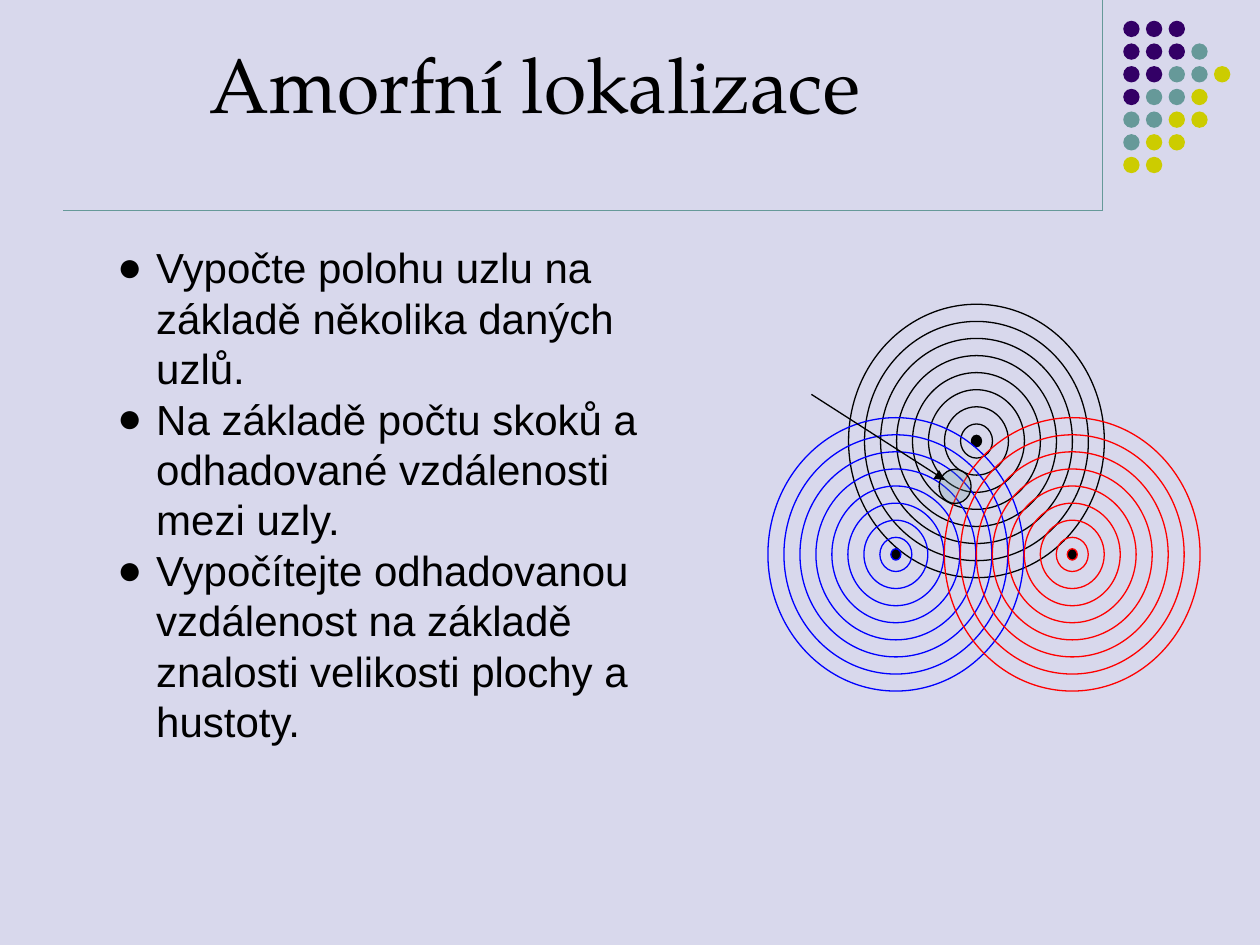
import pptx
import pptx.util
import pptx.dml.color
import pptx.enum.shapes
import pptx.enum.text
import pptx.oxml.ns
from dataclasses import dataclass
from typing import Optional
from lxml import etree

Inches = pptx.util.Inches
Pt = pptx.util.Pt
qn = pptx.oxml.ns.qn


@dataclass(frozen=True)
class Theme:
    background: str = "D8D8EC"
    ink: str = "000000"
    purple: str = "330066"
    teal: str = "669999"
    yellow: str = "CCCC00"
    blue: str = "0000FF"
    red: str = "FF0000"
    title_font: str = "TeX Gyre Pagella"
    body_font: str = "Arial"
    title_size: float = 44
    body_size: float = 24
    body_pitch: float = 28.8
    line_width: float = 0.75


@dataclass(frozen=True)
class Anchor:
    """A known node, surrounded by one ring per hop."""
    x: float
    y: float
    color: str


THEME = Theme()
ANCHORS = [
    Anchor(7.75, 3.5, THEME.ink),
    Anchor(7.11, 4.4, THEME.blue),
    Anchor(8.51, 4.4, THEME.red),
]
HOPS = 8
RING_WIDTH, RING_HEIGHT = 2.03 / HOPS, 2.17 / HOPS

# One letter per dot: purple, teal, yellow
DOT_ROWS = ["PPP", "PPPT", "PPTTY", "PTTY", "TTYY", "TYY", "YY"]
DOT_COLORS = {"P": THEME.purple, "T": THEME.teal, "Y": THEME.yellow}
DOT_LEFT, DOT_TOP, DOT_PITCH, DOT_SIZE = 8.98, 0.23, 0.18, 0.13

BULLETS = [
    "Vypočte polohu uzlu na základě několika daných uzlů.",
    "Na základě počtu skoků a odhadované vzdálenosti mezi uzly.",
    "Vypočítejte odhadovanou vzdálenost na základě znalosti velikosti plochy a hustoty.",
]


def rgb(color: str) -> pptx.dml.color.RGBColor:
    return pptx.dml.color.RGBColor.from_string(color)


def add_ellipse(shapes, x: float, y: float, width: float, height: float, *,
                fill: Optional[str] = None, line: Optional[str] = None,
                alpha: Optional[int] = None):
    """Draw an ellipse around the centre x, y; alpha is the opacity in percent."""
    ellipse = shapes.add_shape(
        pptx.enum.shapes.MSO_SHAPE.OVAL, Inches(x - width / 2),
        Inches(y - height / 2), Inches(width), Inches(height))
    ellipse.shadow.inherit = False
    if fill:
        ellipse.fill.solid()
        ellipse.fill.fore_color.rgb = rgb(fill)
    else:
        ellipse.fill.background()
    if alpha is not None:
        color = ellipse.fill._xPr.find(".//" + qn("a:srgbClr"))
        etree.SubElement(color, qn("a:alpha"), val=str(alpha * 1000))
    if line:
        ellipse.line.color.rgb = rgb(line)
        ellipse.line.width = Pt(THEME.line_width)
    else:
        ellipse.line.fill.background()
    return ellipse


def add_line(shapes, x1: float, y1: float, x2: float, y2: float, color: str,
             *, arrow: bool = False):
    line = shapes.add_connector(
        pptx.enum.shapes.MSO_CONNECTOR.STRAIGHT,
        Inches(x1), Inches(y1), Inches(x2), Inches(y2))
    line.line.color.rgb = rgb(color)
    line.line.width = Pt(THEME.line_width)
    if arrow:
        etree.SubElement(line.line._get_or_add_ln(), qn("a:tailEnd"), type="triangle")
    etree.SubElement(line._element.spPr, qn("a:effectLst"))
    return line


def place(box, left: float, top: float, width: float, height: float, anchor) -> None:
    box.left, box.top = Inches(left), Inches(top)
    box.width, box.height = Inches(width), Inches(height)
    box.text_frame.word_wrap = True
    box.text_frame.auto_size = pptx.enum.text.MSO_AUTO_SIZE.NONE
    box.text_frame.vertical_anchor = anchor


def write(para, text: str, *, font: str, size: float, color: str = THEME.ink,
          pitch: Optional[float] = None, bullet: Optional[str] = None,
          indent: float = 0.31) -> None:
    """Write one left-aligned paragraph, with a hanging bullet if one is given."""
    para.alignment = pptx.enum.text.PP_ALIGN.LEFT
    para.space_before = Pt(0)
    if pitch:
        para.line_spacing = Pt(pitch)
    if bullet:
        properties = para._p.get_or_add_pPr()
        properties.set("marL", str(Inches(indent)))
        properties.set("indent", str(-Inches(indent)))
        etree.SubElement(properties, qn("a:buFont"), typeface=font)
        etree.SubElement(properties, qn("a:buChar"), char=bullet)
    span = para.add_run()
    span.text = text
    span.font.name = font
    span.font.size = Pt(size)
    span.font.color.rgb = rgb(color)


def add_text(page) -> None:
    title, body = page.placeholders[0], page.placeholders[1]
    place(title, 1.41, 0.29, 7.08, 0.73, pptx.enum.text.MSO_ANCHOR.MIDDLE)
    write(title.text_frame.paragraphs[0], " Amorfní lokalizace",
          font=THEME.title_font, size=THEME.title_size)
    place(body, 0.83, 1.87, 4.36, 5.33, pptx.enum.text.MSO_ANCHOR.TOP)
    frame = body.text_frame
    for index, text in enumerate(BULLETS):
        para = frame.add_paragraph() if index else frame.paragraphs[0]
        write(para, text, font=THEME.body_font, size=THEME.body_size,
              pitch=THEME.body_pitch, bullet="●")


def add_decoration(page) -> None:
    add_line(page.shapes, 8.75, 0, 8.75, 1.67, THEME.teal)
    add_line(page.shapes, 0.5, 1.67, 8.75, 1.67, THEME.teal)
    dots = page.shapes.add_group_shape().shapes
    for row, letters in enumerate(DOT_ROWS):
        for column, letter in enumerate(letters):
            add_ellipse(dots, DOT_LEFT + column * DOT_PITCH, DOT_TOP + row * DOT_PITCH,
                        DOT_SIZE, DOT_SIZE, fill=DOT_COLORS[letter])


def add_diagram(page) -> None:
    shapes = page.shapes.add_group_shape().shapes
    for anchor in ANCHORS:
        add_ellipse(shapes, anchor.x, anchor.y, 0.08, 0.09,
                    fill=THEME.ink, line=anchor.color)
        for hop in range(1, HOPS + 1):
            add_ellipse(shapes, anchor.x, anchor.y, hop * RING_WIDTH,
                        hop * RING_HEIGHT, line=anchor.color)
    # Estimated position and the arrow that points at it
    add_ellipse(shapes, 7.58, 3.86, RING_WIDTH, RING_HEIGHT,
                fill=THEME.teal, line=THEME.ink, alpha=25)
    add_line(shapes, 6.44, 3.13, 7.5, 3.81, THEME.ink, arrow=True)


def main() -> None:
    deck = pptx.Presentation()
    deck.slide_width, deck.slide_height = Inches(10), Inches(7.5)
    page = deck.slides.add_slide(deck.slide_layouts[1])
    page.background.fill.solid()
    page.background.fill.fore_color.rgb = rgb(THEME.background)
    add_decoration(page)
    add_text(page)
    add_diagram(page)
    deck.save("out.pptx")


if __name__ == "__main__":
    main()
